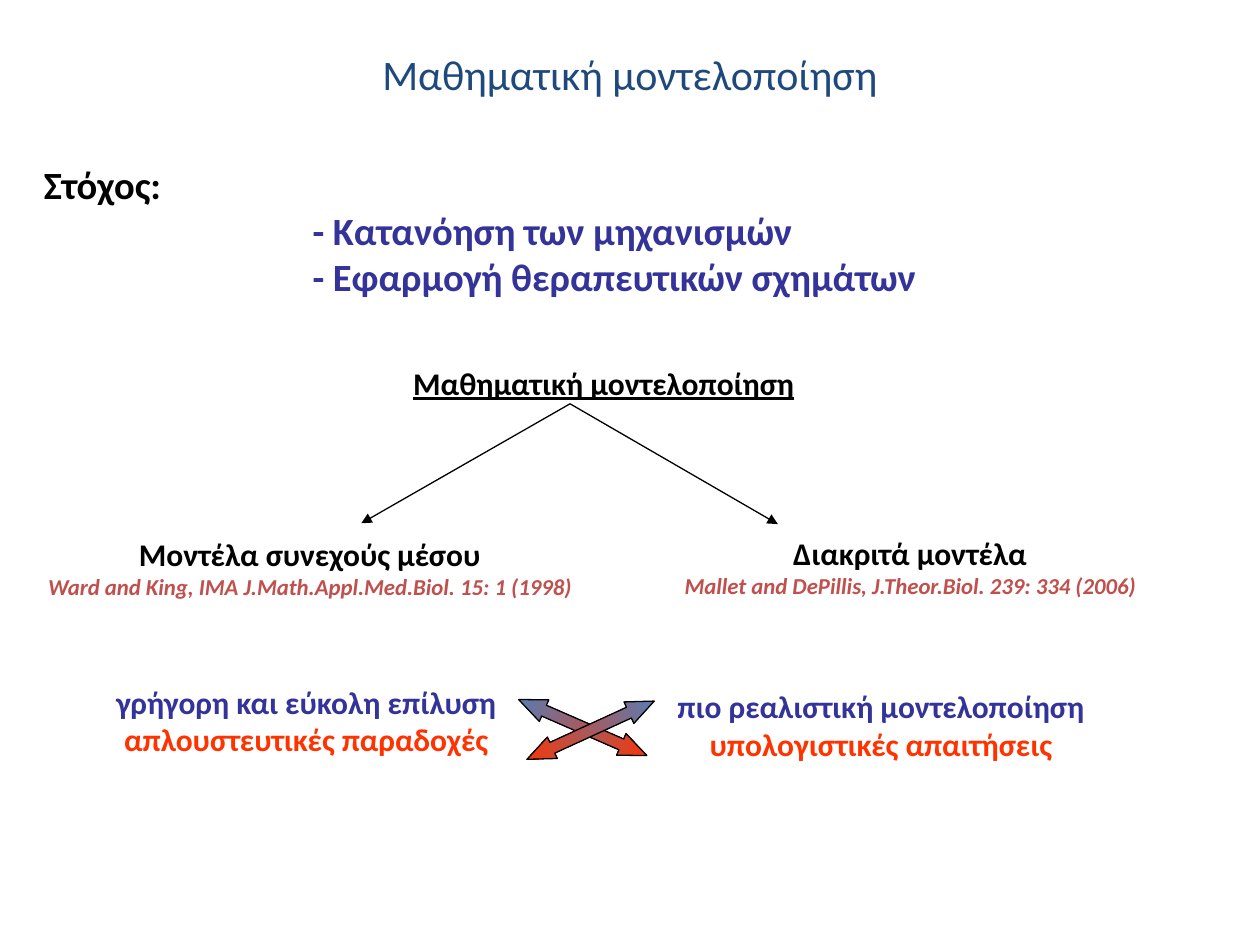
from lxml.etree import SubElement
from pptx import Presentation
from pptx.dml.color import RGBColor
from pptx.enum.shapes import MSO_CONNECTOR, MSO_SHAPE
from pptx.enum.text import PP_ALIGN
from pptx.oxml.ns import qn
from pptx.util import Pt

BLACK = RGBColor(0x00, 0x00, 0x00)
NAVY = RGBColor(0x1F, 0x49, 0x7D)
INDIGO = RGBColor(0x33, 0x33, 0x99)
BRICK = RGBColor(0xC0, 0x50, 0x4D)
BLUE = RGBColor(0x4F, 0x81, 0xBD)
ORANGE = RGBColor(0xFF, 0x33, 0x00)

FONT = "Calibri"
LEFT, CENTER = PP_ALIGN.LEFT, PP_ALIGN.CENTER
GOAL_INDENT = 153.5

# Line styles: size, colour, bold, italic, underline, indent
STYLES = {
    "title": (24, NAVY, False, False, False, 0),
    "label": (22, BLACK, True, False, False, 0),
    "goal": (22, INDIGO, True, False, False, GOAL_INDENT),
    "root": (18, BLACK, True, False, True, 0),
    "model": (18, BLACK, True, False, False, 0),
    "citation": (13, BRICK, True, True, False, 0),
    "advantage": (18, INDIGO, True, False, False, 0),
    "drawback": (18, ORANGE, True, False, False, 0),
}

# Text blocks: (left, top, width, height), alignment, wrap, lines
TEXT_BLOCKS = [
    ((18, 88.5, 519, 87), LEFT, False, [
        ("label", "Στόχος:"),
        ("goal", "- Κατανόηση των μηχανισμών"),
        ("goal", "- Εφαρμογή θεραπευτικών σχημάτων")]),
    ((229, 204.5, 234, 29), LEFT, False, [
        ("root", "Μαθηματική μοντελοποίηση")]),
    ((18, 302, 318, 44.5), CENTER, False, [
        ("model", "Μοντέλα συνεχούς μέσου"),
        ("citation", "Ward and King, IMA J.Math.Appl.Med.Biol. 15: 1 (1998)")]),
    ((382, 301.5, 276, 44.5), CENTER, False, [
        ("model", "Διακριτά μοντέλα"),
        ("citation", "Mallet and DePillis, J.Theor.Biol. 239: 334 (2006)")]),
    ((58.5, 386.5, 233, 51), CENTER, False, [
        ("advantage", "γρήγορη και εύκολη επίλυση"),
        ("drawback", "απλουστευτικές παραδοχές")]),
    ((379, 389, 249, 51), CENTER, False, [
        ("advantage", "πιο ρεαλιστική μοντελοποίηση"),
        ("drawback", "υπολογιστικές απαιτήσεις")]),
    ((0, 24, 720, 36), CENTER, True, [
        ("title", "Μαθηματική μοντελοποίηση")]),
]

BRANCH_START = (325.75, 230.75)
BRANCH_ENDS = [(206.5, 299), (444.5, 299.5)]

# Crossing arrows: left, top, rotation
CROSS_ARROWS = [(293, 409, 23.6), (297.5, 410.5, 155.4)]
CROSS_SIZE = (80, 13.5)


def add_text_block(slide, box, alignment, wrap, lines):
    frame = slide.shapes.add_textbox(*map(Pt, box)).text_frame
    frame.word_wrap = wrap
    frame.text = "\n".join(text for _, text in lines)
    for paragraph, (style, _) in zip(frame.paragraphs, lines):
        size, color, bold, italic, underline, indent = STYLES[style]
        paragraph.alignment = alignment
        if indent:
            paragraph._p.get_or_add_pPr().set("marL", str(Pt(indent)))
        font = paragraph.runs[0].font
        font.name, font.size, font.color.rgb = FONT, Pt(size), color
        font.bold, font.italic, font.underline = bold, italic, underline


def add_branch(slide, start, end):
    branch = slide.shapes.add_connector(
        MSO_CONNECTOR.STRAIGHT, *map(Pt, start + end))
    branch.line.color.rgb = BLACK
    branch.line.width = Pt(0.75)
    SubElement(branch.line._get_or_add_ln(), qn("a:tailEnd"), type="triangle")
    SubElement(branch._element.spPr, qn("a:effectLst"))


def add_cross_arrow(slide, left, top, rotation):
    arrow = slide.shapes.add_shape(
        MSO_SHAPE.LEFT_RIGHT_ARROW, *map(Pt, (left, top) + CROSS_SIZE))
    arrow.shadow.inherit = False
    arrow.rotation = rotation
    arrow.adjustments[0] = 0.5
    arrow.adjustments[1] = 1.18
    arrow.fill.gradient()
    arrow.fill.gradient_angle = 0
    for stop, position, color in zip(
            arrow.fill.gradient_stops, (0, 1), (BLUE, ORANGE)):
        stop.position = position
        stop.color.rgb = color
    arrow.line.color.rgb = BLACK
    arrow.line.width = Pt(0.75)


def main():
    presentation = Presentation()
    presentation.slide_width, presentation.slide_height = Pt(720), Pt(540)
    slide = presentation.slides.add_slide(presentation.slide_layouts[6])
    for block in TEXT_BLOCKS:
        add_text_block(slide, *block)
    for end in BRANCH_ENDS:
        add_branch(slide, BRANCH_START, end)
    for arrow in CROSS_ARROWS:
        add_cross_arrow(slide, *arrow)
    presentation.save("out.pptx")


if __name__ == "__main__":
    main()
